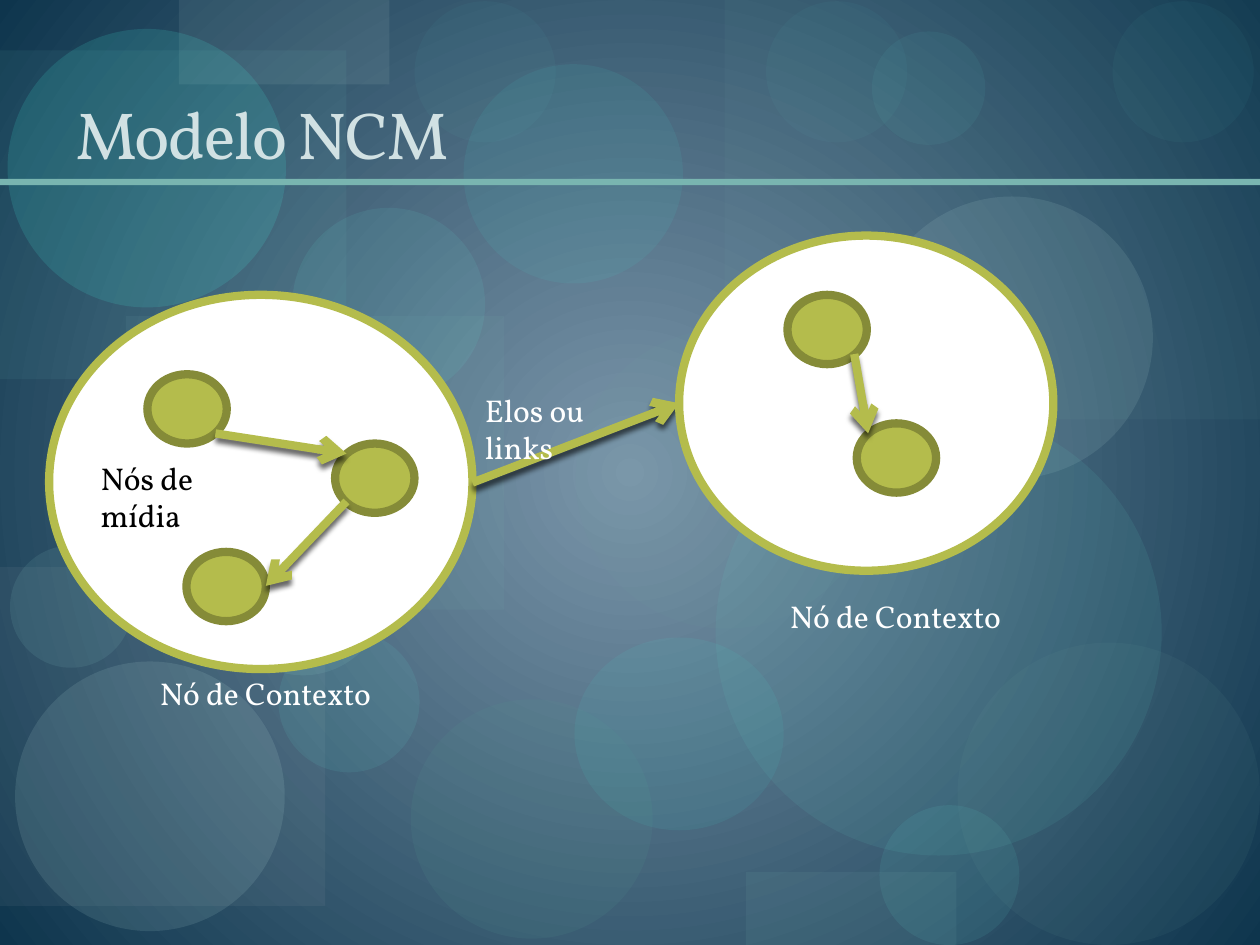
from lxml import etree
from pptx import Presentation
from pptx.dml.color import RGBColor
from pptx.enum.shapes import MSO_CONNECTOR as Line, MSO_SHAPE as Form
from pptx.enum.text import MSO_ANCHOR as Anchor
from pptx.oxml.ns import qn
from pptx.util import Inches, Pt

COLS, ROWS = 10, 7.5
LIME, OLIVE, TEAL, WHITE = "B4BC4C", "858B38", "79B5B0", "FFFFFF"


def paint(code):
    return RGBColor.from_string(code)


def add(parent, tag, **attrs):
    return etree.SubElement(parent, qn(tag), {k: str(v) for k, v in attrs.items()})


class Board:
    """Style and current slide; lengths are columns and rows of a 10 by 7.5 grid."""
    face = "Vollkorn"
    edge = Pt(4.72)
    node_size = 0.63, 0.55

    def __init__(self, deck):
        self.slide = deck.slides.add_slide(deck.slide_layouts[6])
        self.shapes = self.slide.shapes
        self.col = deck.slide_width / COLS
        self.row = deck.slide_height / ROWS

    def place(self, x, y):
        return round(x * self.col), round(y * self.row)

    def glow(self, inner, outer):
        fill = self.slide.background.fill
        fill.gradient()
        for stop, code, pos in zip(fill.gradient_stops, (inner, outer), (0, 1)):
            stop.color.rgb = paint(code)
            stop.position = pos
        grad = self.slide.background._cSld.find(".//" + qn("a:gradFill"))
        grad.remove(grad.find(qn("a:lin")))
        path = add(grad, "a:path", path="circle")
        add(path, "a:fillToRect", l=50000, t=50000, r=50000, b=50000)

    def shape(self, form, x, y, w, h, fill, edge=None, alpha=None):
        item = self.shapes.add_shape(form, *self.place(x, y), *self.place(w, h))
        item.shadow.inherit = False
        item.fill.solid()
        item.fill.fore_color.rgb = paint(fill)
        if alpha:
            color = item._element.spPr.find(".//" + qn("a:srgbClr"))
            add(color, "a:alpha", val=alpha * 1000)
        if edge:
            item.line.color.rgb = paint(edge)
            item.line.width = self.edge
        else:
            item.line.fill.background()

    def context(self, x, y, w, h):
        self.shape(Form.OVAL, x, y, w, h, WHITE, LIME)

    def node(self, x, y):
        self.shape(Form.OVAL, x, y, *self.node_size, LIME, OLIVE)

    def arrow(self, start, end):
        item = self.shapes.add_connector(
            Line.STRAIGHT, *self.place(*start), *self.place(*end))
        item.line.color.rgb = paint(LIME)
        item.line.width = self.edge
        add(item.line._get_or_add_ln(), "a:tailEnd", type="arrow")
        effect = add(item._element.spPr, "a:effectLst")
        shade = add(effect, "a:outerShdw", blurRad=Pt(3), dist=Pt(3),
                    dir=90 * 60000, rotWithShape=0)
        add(add(shade, "a:srgbClr", val="000000"), "a:alpha", val=60000)

    def text(self, words, x, y, w, h, color=WHITE, size=18, wrap=True):
        box = self.shapes.add_textbox(*self.place(x, y), *self.place(w, h))
        frame = box.text_frame
        frame.word_wrap = wrap
        para = frame.paragraphs[0]
        para.text = words
        para.font.name = self.face
        para.font.size = Pt(size)
        para.font.color.rgb = paint(color)
        return frame

    def title(self, words):
        frame = self.text(words, 0.5, 0.17, 9, 1.25, "D1E1E3", 38)
        frame.vertical_anchor = Anchor.BOTTOM
        frame.paragraphs[0].runs[0]._r.get_or_add_rPr().set("spc", "-100")


# Backdrop, back to front: form, left, top, width, height, colour, opacity
BOX, DISC = Form.RECTANGLE, Form.OVAL
DECOR = [
    (BOX, 1, 2.51, 3, 2.33, TEAL, 9),
    (DISC, 3.26, 5.55, 1.92, 1.9, "549791", 13),
    (BOX, 5.75, 0, 4.25, 3.33, TEAL, 6),
    (BOX, 0, 4.5, 2.58, 2.69, "B2B7BA", 8),
    (DISC, 4.57, 2.61, 2.38, 2.38, "70A39E", 8),
    (DISC, 6.98, 6.39, 1.11, 1.11, "65E8DC", 9),
    (DISC, 6.91, 1.56, 2.24, 2.24, "C1E8E4", 11),
    (DISC, 0.12, 5.25, 2.14, 2.14, "C1E8E4", 12),
    (DISC, 2.21, 5.01, 1.12, 1.12, "65E8DC", 9),
    (DISC, 4.56, 5.06, 1.66, 1.53, "44EADC", 8),
    (BOX, 0, 0.4, 2.75, 2.61, "77D6CE", 7),
    (BOX, 1.42, 0, 1.67, 0.67, "BED7D4", 10),
    (DISC, 0.06, 0.23, 2.21, 2.21, "44EADC", 15),
    (DISC, 0.08, 4.33, 0.97, 0.97, "97DCD6", 10),
    (DISC, 2.32, 1.65, 1.53, 1.53, "65E8DC", 9),
    (DISC, 3.68, 0.51, 1.74, 1.74, "44EADC", 8),
    (DISC, 5.68, 3.25, 3.54, 3.54, "61CDC4", 10),
    (DISC, 6.08, 0.01, 1.12, 1.12, "65E8DC", 4),
    (DISC, 7.6, 5.1, 2.4, 2.4, "70A39E", 8),
    (DISC, 1.75, 4.05, 1.31, 1.31, "97DCD6", 10),
    (DISC, 6.92, 0.25, 0.9, 0.9, "65E8DC", 6),
    (DISC, 8.83, 0.01, 1.12, 1.12, "65E8DC", 4),
    (BOX, 5.92, 6.92, 1.67, 0.58, TEAL, 10),
    (DISC, 3.29, 0.01, 1.12, 1.12, "65E8DC", 4),
    (BOX, 0, 1.42, COLS, 0.05, TEAL, None),
]


def main():
    deck = Presentation()
    deck.slide_width, deck.slide_height = Inches(COLS), Inches(ROWS)
    board = Board(deck)

    # Backdrop and title
    board.glow("7B96AA", "0E354D")
    for form, x, y, w, h, color, alpha in DECOR:
        board.shape(form, x, y, w, h, color, alpha=alpha)
    board.title("Modelo NCM")

    # Left context with its media nodes and links
    board.context(0.39, 2.34, 3.36, 2.97)
    for spot in (1.17, 2.97), (1.48, 4.38), (2.66, 3.52):
        board.node(*spot)
    board.arrow((1.71, 3.44), (2.75, 3.6))
    board.arrow((2.75, 3.98), (2.11, 4.65))

    # Link between the contexts
    board.arrow((3.75, 3.83), (5.39, 3.2))

    # Right context, grouped
    board.shapes = board.slide.shapes.add_group_shape().shapes
    board.context(5.39, 1.87, 2.97, 2.66)
    for spot in (6.25, 2.34), (6.8, 3.36):
        board.node(*spot)
    board.arrow((6.78, 2.81), (6.89, 3.44))
    board.shapes = board.slide.shapes

    # Labels
    for x, y in (1.17, 5.3), (6.17, 4.69):
        board.text("Nó de Contexto", x, y, 1.89, 0.4, wrap=False)
    board.text("Elos ou links", 3.75, 3.05, 1.2, 0.71)
    board.text("Nós de mídia", 0.7, 3.59, 1.2, 0.71, "000000")

    deck.save("out.pptx")


if __name__ == "__main__":
    main()
